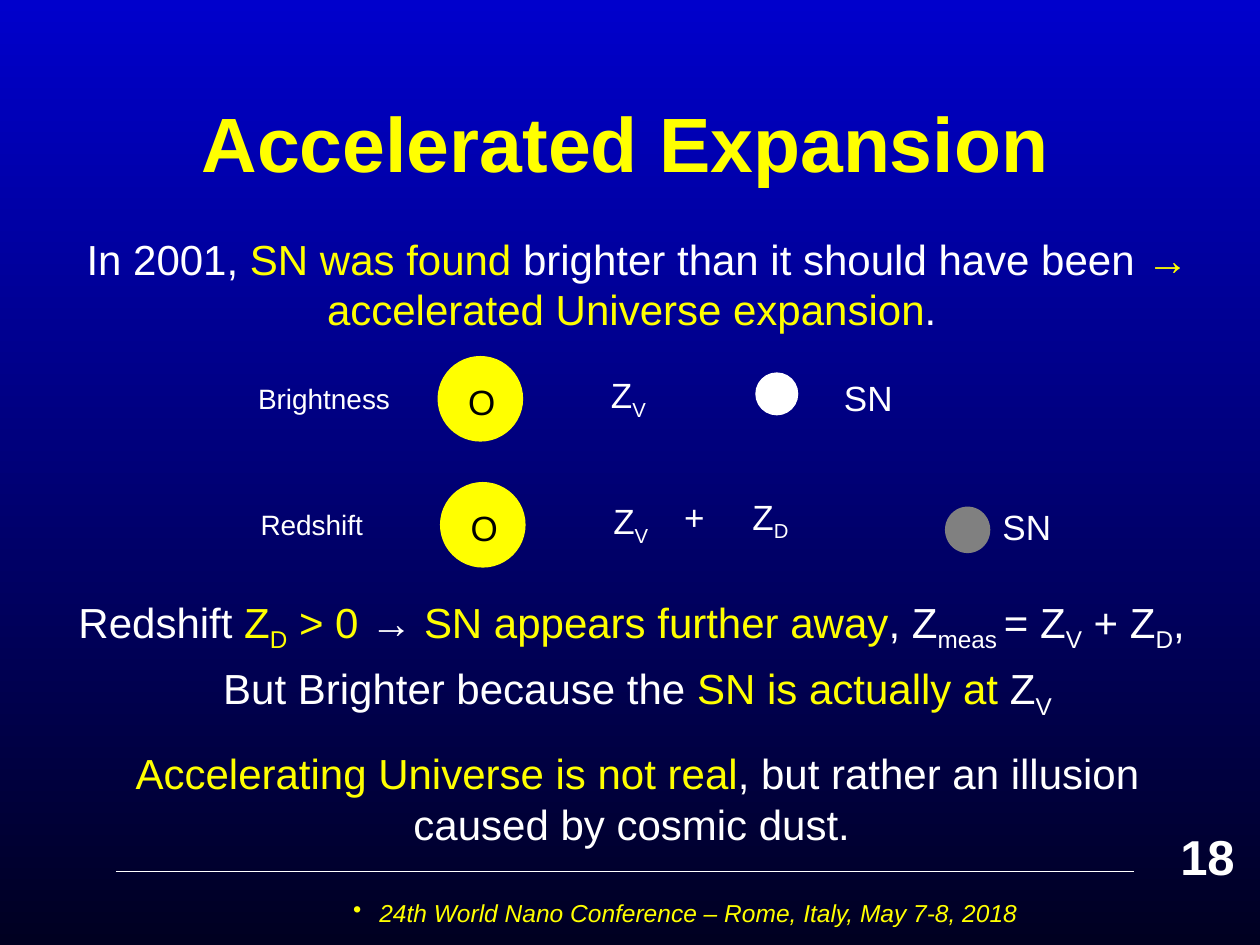
from lxml.etree import SubElement
from pptx import Presentation
from pptx.dml.color import RGBColor
from pptx.enum.shapes import MSO_CONNECTOR, MSO_SHAPE
from pptx.enum.text import MSO_ANCHOR, MSO_AUTO_SIZE, PP_ALIGN
from pptx.oxml.ns import qn
from pptx.util import Pt

BLUE = RGBColor(0x00, 0x00, 0xCC)
NAVY = RGBColor(0x00, 0x00, 0x21)
YELLOW = RGBColor(0xFF, 0xFF, 0x00)
WHITE = RGBColor(0xFF, 0xFF, 0xFF)
GREY = RGBColor(0x80, 0x80, 0x80)
BLACK = RGBColor(0x00, 0x00, 0x00)

CENTRE = {"alignment": PP_ALIGN.CENTER}
BODY = [
    (0, [("In 2001, ", WHITE), ("SN was found ", YELLOW),
         ("brighter than it should have been ", WHITE),
         ("→ accelerated Universe expansion", YELLOW), (". ", WHITE)]),
    (150, [("Redshift ", WHITE), ("Z", YELLOW), ("D", YELLOW, "sub"), (" > 0 ", YELLOW),
           ("→", WHITE), (" SN appears further away", YELLOW), (", Z", WHITE),
           ("meas ", WHITE, "sub"), ("= Z", WHITE), ("V", WHITE, "sub"),
           (" + Z", WHITE), ("D", WHITE, "sub"), (", ", WHITE)]),
    (5, [("But Brighter because the ", WHITE), ("SN is actually at ", YELLOW),
         ("Z", WHITE), ("V", WHITE, "sub")]),
    (16, [("Accelerating Universe is not real", YELLOW),
          (", but rather an illusion caused by cosmic dust. ", WHITE)]),
]


def set_format(target, values):
    for name, value in values.items():
        setattr(target, name, value)


def place(shape, box):
    values = [Pt(length) for length in box]
    set_format(shape, dict(zip(("left", "top", "width", "height"), values)))


def write(para, spans, size, para_format=None, **font_format):
    """Fill a paragraph with (text, colour) spans; a third item marks a subscript."""
    set_format(para, para_format or {})
    for text, colour, *subscript in spans:
        span = para.add_run()
        span.text = text
        set_format(span.font, {"name": "Arial", "size": Pt(size), **font_format})
        span.font.color.rgb = colour
        if subscript:
            span._r.get_or_add_rPr().set("baseline", "-25000")


def set_bullet(para, char=None, indent=0):
    properties = para._p.get_or_add_pPr()
    properties.set("marL", str(Pt(indent)))
    properties.set("indent", str(-Pt(indent)))
    if char:
        SubElement(properties, qn("a:buChar"), char=char)
    else:
        SubElement(properties, qn("a:buNone"))


def add_label(page, box, spans, size, **font_format):
    label = page.shapes.add_textbox(*[Pt(length) for length in box])
    label.text_frame.word_wrap = True
    para = label.text_frame.paragraphs[0]
    write(para, spans, size, **font_format)
    return para


def add_disc(page, box, colour, outlined=True):
    disc = page.shapes.add_shape(MSO_SHAPE.OVAL, *[Pt(length) for length in box])
    disc.shadow.inherit = False
    disc.fill.solid()
    disc.fill.fore_color.rgb = colour
    if outlined:
        disc.line.color.rgb = colour
        disc.line.width = Pt(0.75)
    else:
        disc.line.fill.background()


def add_background(page):
    fill = page.background.fill
    fill.gradient()
    fill.gradient_angle = 270
    for stop, position, colour in zip(fill.gradient_stops, (0, 1), (BLUE, NAVY)):
        stop.position = position
        stop.color.rgb = colour


def add_title(page, box):
    title = page.shapes.title
    place(title, box)
    title.text_frame.vertical_anchor = MSO_ANCHOR.MIDDLE
    write(title.text_frame.paragraphs[0], [("Accelerated Expansion ", YELLOW)], 44,
          CENTRE, bold=True)


def add_body(page, box):
    body = page.placeholders[1]
    place(body, box)
    frame = body.text_frame
    frame.auto_size = MSO_AUTO_SIZE.NONE
    for index, (gap, spans) in enumerate(BODY):
        para = frame.add_paragraph() if index else frame.paragraphs[0]
        write(para, spans, 24, {**CENTRE, "space_before": Pt(gap)})
        set_bullet(para)


def add_observer_row(page, left, top, name):
    """Draw what both rows share: name, observer disc and velocity redshift."""
    add_label(page, (left, top + 10.8, 110, 26.6), [(name, WHITE)], 16)
    add_disc(page, (left + 110, top, 48.2, 48.2), YELLOW)
    add_label(page, (left + 120, top + 10, 50, 31.7), [("O", BLACK)], 20)
    add_label(page, (left + 201.6, top + 6, 53.3, 31.7),
              [("Z", WHITE), ("V", WHITE, "sub")], 20)


def add_supernova(page, disc_box, colour, label_left, label_top, outlined=True):
    add_disc(page, disc_box, colour, outlined)
    add_label(page, (label_left, label_top, 55, 31.7), [("SN", WHITE)], 20)


def add_brightness_row(page, left, top):
    add_observer_row(page, left, top, "Brightness")
    add_supernova(page, (left + 291.6, top + 9.4, 23.8, 23.8), WHITE, left + 334.8, top + 8)


def add_redshift_row(page, left, top):
    add_observer_row(page, left, top, "Redshift")
    para = add_label(page, (left + 242, top + 3.6, 118, 31.7),
                     [("+\tZ", WHITE), ("D", WHITE, "sub")], 20)
    tabs = SubElement(para._p.get_or_add_pPr(), qn("a:tabLst"))
    SubElement(tabs, qn("a:tab"), pos=str(Pt(39)), algn="l")
    add_supernova(page, (left + 398.2, top + 13.7, 25.9, 26.6), GREY,
                  left + 424, top + 9.4, outlined=False)


def add_footer(page, left, top, width):
    rule = page.shapes.add_connector(MSO_CONNECTOR.STRAIGHT, Pt(left), Pt(top),
                                     Pt(left + width), Pt(top))
    rule.line.color.rgb = WHITE
    rule.line.width = Pt(0.75)
    SubElement(rule._element.spPr, qn("a:effectLst"))
    para = add_label(page, (left - 6.4, top + 11.5, 663.8, 30),
                     [("24th World Nano Conference – Rome, Italy, May 7-8, 2018", YELLOW)],
                     14, italic=True)
    set_format(para, CENTRE)
    set_bullet(para, "•", 15)
    add_label(page, (left + 601.2, top - 29.5, 52.6, 41), [("18", WHITE)], 28, bold=True)


def main():
    deck = Presentation()
    set_format(deck, {"slide_width": Pt(720), "slide_height": Pt(540)})
    page = deck.slides.add_slide(deck.slide_layouts[1])
    add_background(page)
    add_title(page, (57.6, 36, 612, 90))
    add_body(page, (30.2, 129.6, 668.2, 362.2))
    add_brightness_row(page, 140.4, 203.8)
    add_redshift_row(page, 141.8, 275.8)
    add_footer(page, 66.2, 498.2, 581.8)
    deck.save("out.pptx")


if __name__ == "__main__":
    main()
